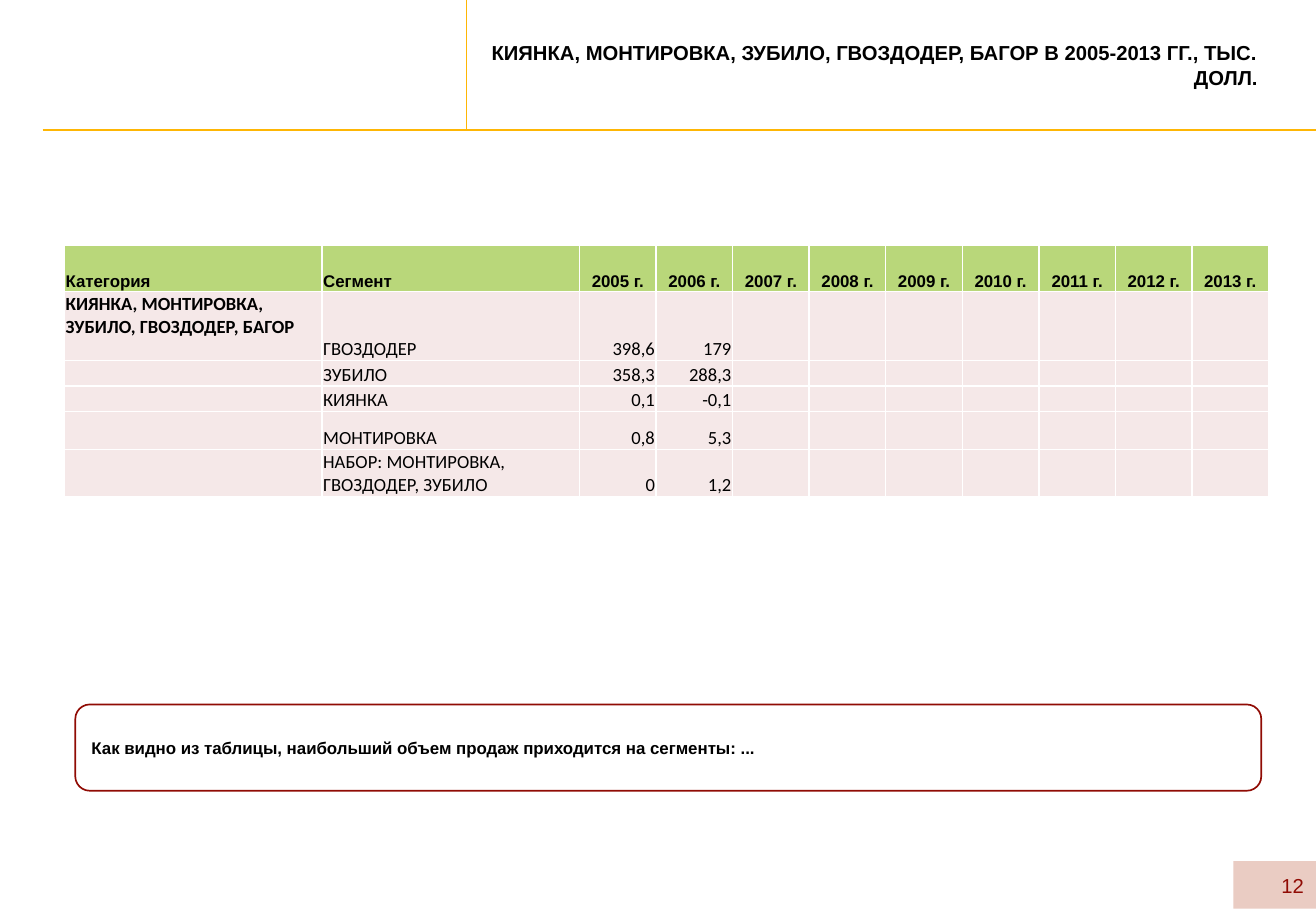
"""Build the sales table slide for hand tools, 2005-2013."""
import dataclasses

import lxml.etree
import pptx
import pptx.dml.color
import pptx.enum.shapes
import pptx.enum.text
import pptx.oxml.ns
import pptx.util

Inches = pptx.util.Inches
Pt = pptx.util.Pt
RGB = pptx.dml.color.RGBColor.from_string
qn = pptx.oxml.ns.qn
ALIGN = pptx.enum.text.PP_ALIGN
ANCHOR = pptx.enum.text.MSO_ANCHOR
SHAPE = pptx.enum.shapes.MSO_SHAPE


@dataclasses.dataclass(frozen=True)
class Theme:
    ink: str = "000000"
    accent: str = "900B04"
    rule: str = "FEB604"
    tab: str = "EACCC3"
    header: str = "B9D77A"
    body: str = "F5E8E8"
    border: str = "FFFFFF"
    heading_font: str = "Arial"
    body_font: str = "Calibri"
    title_size: int = 12
    note_size: int = 10
    body_size: int = 11


class Deck:
    def __init__(self, prs, theme):
        self.theme = theme
        self.slide = prs.slides.add_slide(prs.slide_layouts[5])

    def fill_text(self, tf, text, size, align, color=None, bold=False):
        frame = {"word_wrap": True, "vertical_anchor": ANCHOR.MIDDLE,
                 "auto_size": pptx.enum.text.MSO_AUTO_SIZE.NONE}
        for name, value in frame.items():
            setattr(tf, name, value)
        p = tf.paragraphs[0]
        p.alignment = align
        self.run(p, text, size, self.theme.heading_font, color, bold)

    def run(self, p, text, size, font, color=None, bold=False):
        r = p.add_run()
        r.text = text
        style = {"name": font, "size": Pt(size), "bold": bold}
        for name, value in style.items():
            setattr(r.font, name, value)
        r.font.color.rgb = RGB(color or self.theme.ink)

    def title(self, text, box):
        sp = self.slide.shapes.title
        for name, value in zip(("left", "top", "width", "height"), box):
            setattr(sp, name, Inches(value))
        self.fill_text(sp.text_frame, text, self.theme.title_size, ALIGN.RIGHT, bold=True)

    def text(self, text, box, size, align, color):
        sp = self.slide.shapes.add_textbox(*map(Inches, box))
        self.fill_text(sp.text_frame, text, size, align, color=color)

    def shape(self, kind, box, fill=None, line=None):
        sp = self.slide.shapes.add_shape(kind, *map(Inches, box))
        sp.shadow.inherit = False
        if fill:
            sp.fill.solid()
            sp.fill.fore_color.rgb = RGB(fill)
        else:
            sp.fill.background()
        if line:
            sp.line.color.rgb = RGB(line)
            sp.line.width = Pt(1)
        else:
            sp.line.fill.background()
        return sp

    def line(self, ends, width):
        c = self.slide.shapes.add_connector(
            pptx.enum.shapes.MSO_CONNECTOR.STRAIGHT, *map(Inches, ends))
        c.line.color.rgb = RGB(self.theme.rule)
        c.line.width = Pt(width)
        lxml.etree.SubElement(c._element.spPr, qn("a:effectLst"))

    def cell(self, cell, text, align, fill, font, size, bold, anchor):
        margins = {"margin_left": 0.01, "margin_right": 0.01,
                   "margin_top": 0.01, "margin_bottom": 0}
        for name, value in margins.items():
            setattr(cell, name, Inches(value))
        cell.vertical_anchor = anchor
        tc_pr = cell._tc.get_or_add_tcPr()
        for side in ("a:lnL", "a:lnR", "a:lnT", "a:lnB"):
            ln = lxml.etree.SubElement(tc_pr, qn(side), w=str(Pt(1)))
            solid = lxml.etree.SubElement(ln, qn("a:solidFill"))
            lxml.etree.SubElement(solid, qn("a:srgbClr"), val=self.theme.border)
        cell.fill.solid()
        cell.fill.fore_color.rgb = RGB(fill)
        p = cell.text_frame.paragraphs[0]
        p.alignment = align
        if text:
            self.run(p, text, size, font, bold=bold)
        else:
            lxml.etree.SubElement(p._p, qn("a:endParaRPr"), sz=str(size * 100))

    def table(self, rows, box, widths, heights):
        t = self.theme
        table = self.slide.shapes.add_table(
            len(rows), len(widths), *map(Inches, box)).table
        table.horz_banding = False
        for column, width in zip(table.columns, widths):
            column.width = Inches(width)
        for i, (row, values) in enumerate(zip(table.rows, rows)):
            row.height = Inches(heights[i])
            head = i == 0
            look = ((t.header, t.heading_font, t.note_size) if head
                    else (t.body, t.body_font, t.body_size))
            for j, cell in enumerate(row.cells):
                text = values[j] if j < len(values) else ""
                number_align = ALIGN.CENTER if head else ALIGN.RIGHT
                align = ALIGN.LEFT if j < 2 else number_align
                category = j == 0 and not head
                anchor = ANCHOR.TOP if category else ANCHOR.BOTTOM
                self.cell(cell, text, align, *look, head or category, anchor)


def main():
    prs = pptx.Presentation()
    prs.slide_width, prs.slide_height = Inches(10.83), Inches(7.5)
    theme = Theme()
    deck = Deck(prs, theme)

    deck.shape(SHAPE.RECTANGLE, (10.15, 7.09, 0.68, 0.39), fill=theme.tab)
    deck.line((0.35, 1.07, 10.83, 1.07), 1)
    deck.line((3.84, 1.07, 3.84, 0), 0.75)
    deck.text("12", (8.3, 7.09, 2.53, 0.4), theme.title_size, ALIGN.RIGHT, theme.accent)
    deck.title("КИЯНКА, МОНТИРОВКА, ЗУБИЛО, ГВОЗДОДЕР, БАГОР В 2005-2013 ГГ., ТЫС. ДОЛЛ.",
               (3.84, 0, 6.61, 1.07))

    years = [f"{year} г." for year in range(2005, 2014)]
    rows = [
        ["Категория", "Сегмент", *years],
        ["КИЯНКА, МОНТИРОВКА, ЗУБИЛО, ГВОЗДОДЕР, БАГОР", "ГВОЗДОДЕР", "398,6", "179"],
        ["", "ЗУБИЛО", "358,3", "288,3"],
        ["", "КИЯНКА", "0,1", "-0,1"],
        ["", "МОНТИРОВКА", "0,8", "5,3"],
        ["", "НАБОР: МОНТИРОВКА, ГВОЗДОДЕР, ЗУБИЛО", "0", "1,2"],
    ]
    deck.table(rows, (0.53, 2.02, 9.92, 2.04),
               [2.12] * 2 + [0.63] * len(years),
               [0.38, 0.57, 0.21, 0.21, 0.31, 0.38])

    note = deck.shape(SHAPE.ROUNDED_RECTANGLE, (0.62, 5.8, 9.76, 0.71), line=theme.accent)
    deck.fill_text(note.text_frame,
                   "Как видно из таблицы, наибольший объем продаж приходится на сегменты: ...",
                   theme.note_size, ALIGN.JUSTIFY, bold=True)
    prs.save("out.pptx")


if __name__ == "__main__":
    main()
